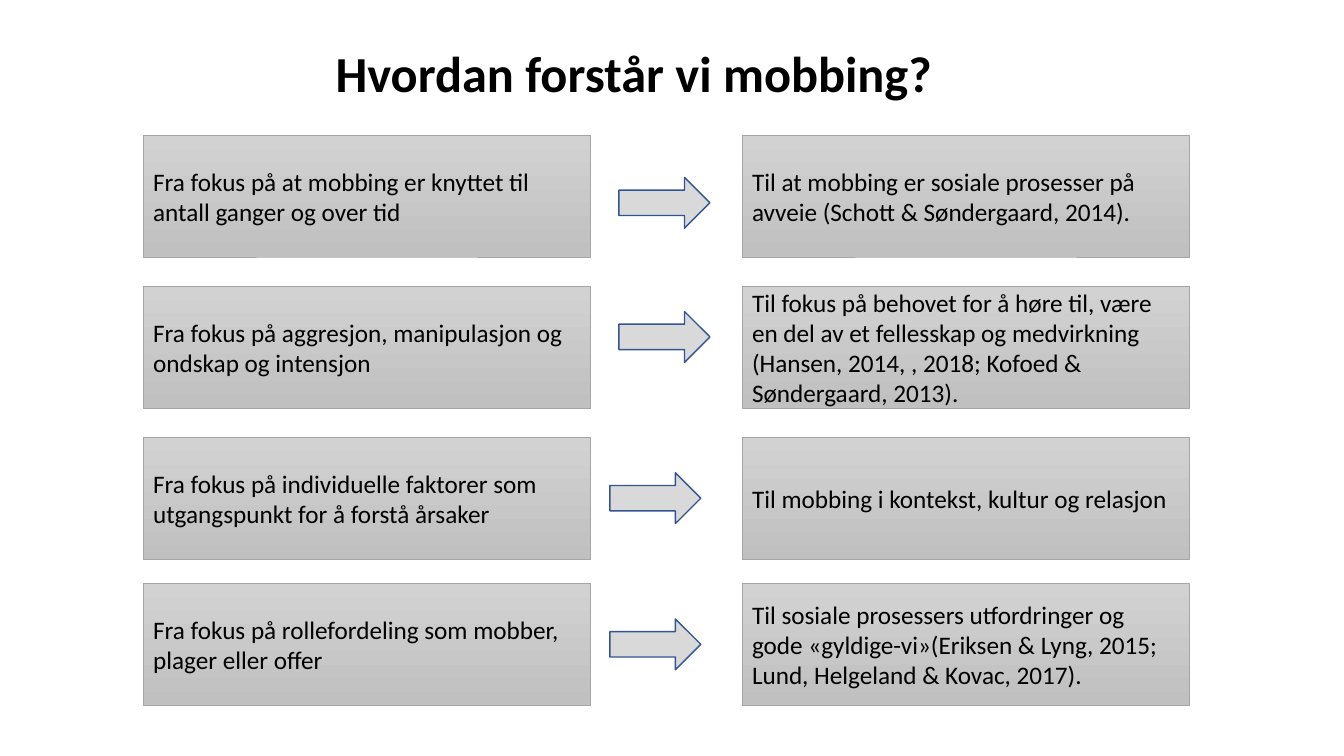
import pptx
import pptx.util
import pptx.dml.color
import pptx.enum.shapes
import pptx.enum.text

Pt = pptx.util.Pt
RGB = pptx.dml.color.RGBColor
SHAPE = pptx.enum.shapes.MSO_SHAPE
ALIGN = pptx.enum.text.PP_ALIGN
ANCHOR = pptx.enum.text.MSO_ANCHOR

BLACK = RGB(0x00, 0x00, 0x00)
LIGHT = RGB(0xD2, 0xD2, 0xD2)
DARK = RGB(0xC0, 0xC0, 0xC0)
BORDER = RGB(0xA5, 0xA5, 0xA5)
PALE = RGB(0xD9, 0xD9, 0xD9)
BLUE = RGB(0x32, 0x54, 0x91)

LEFT, WIDTH, HEIGHT = 102.3, 747.5, 87.1
CARD = 319.7

# Row top, arrow offset from the row's corner, old view, new view
ROWS = [
    (96.5, 339.8, 30.2,
     "Fra fokus på at mobbing er knyttet til antall ganger og over tid",
     "Til at mobbing er sosiale prosesser på avveie (Schott & Søndergaard, 2014)."),
    (204.5, 339.8, 18,
     "Fra fokus på aggresjon, manipulasjon og ondskap og intensjon",
     "Til fokus på behovet for å høre til, være en del av et fellesskap og "
     "medvirkning (Hansen, 2014, , 2018; Kofoed & Søndergaard, 2013)."),
    (312.5, 333.3, 25.2,
     "Fra fokus på individuelle faktorer som utgangspunkt for å forstå årsaker",
     "Til mobbing i kontekst, kultur og relasjon"),
    (416.9, 333.3, 25.2,
     "Fra fokus på rollefordeling som mobber, plager eller offer",
     "Til sosiale prosessers utfordringer og gode «gyldige-vi»(Eriksen & Lyng, "
     "2015; Lund, Helgeland & Kovac, 2017)."),
]


def write(shape, text, size, bold=False):
    frame = shape.text_frame
    frame.word_wrap = True
    frame.text = text
    para = frame.paragraphs[0]
    para.alignment = ALIGN.LEFT
    font = para.runs[0].font
    font.name = "Calibri"
    font.size = Pt(size)
    font.bold = bold
    font.color.rgb = BLACK


def add_title(slide, x, y, w, h):
    box = slide.shapes.add_textbox(Pt(x), Pt(y), Pt(w), Pt(h))
    write(box, "Hvordan forstår vi mobbing?", 36, True)


def add_form(slide, kind, x, y, w, h, color, weight):
    """Add an outlined shape without shadow."""
    form = slide.shapes.add_shape(kind, Pt(x), Pt(y), Pt(w), Pt(h))
    form.shadow.inherit = False
    form.line.color.rgb = color
    form.line.width = Pt(weight)
    return form


def add_card(slide, x, y, w, h, text):
    card = add_form(slide, SHAPE.RECTANGLE, x, y, w, h, BORDER, 0.5)
    card.fill.gradient()
    card.fill.gradient_angle = 270
    for stop, color in zip(card.fill.gradient_stops, (LIGHT, DARK)):
        stop.color.rgb = color
    card.text_frame.vertical_anchor = ANCHOR.MIDDLE
    write(card, text, 18)


def add_arrow(slide, x, y, w, h):
    arrow = add_form(slide, SHAPE.RIGHT_ARROW, x, y, w, h, BLUE, 1)
    arrow.fill.solid()
    arrow.fill.fore_color.rgb = PALE


def add_row(slide, x, y, w, h, shift, drop, old, new):
    """Place the old view, the new view and the arrow between them."""
    add_card(slide, x, y, CARD, h, old)
    add_card(slide, x + w - CARD, y, CARD, h, new)
    add_arrow(slide, x + shift, y + drop, 65, 36.3)


def main():
    deck = pptx.Presentation()
    deck.slide_width, deck.slide_height = Pt(960), Pt(540)
    slide = deck.slides.add_slide(deck.slide_layouts[6])
    add_title(slide, 232.6, 26.6, 511.9, 51)
    for top, shift, drop, old, new in ROWS:
        add_row(slide, LEFT, top, WIDTH, HEIGHT, shift, drop, old, new)
    deck.save("out.pptx")


if __name__ == "__main__":
    main()
